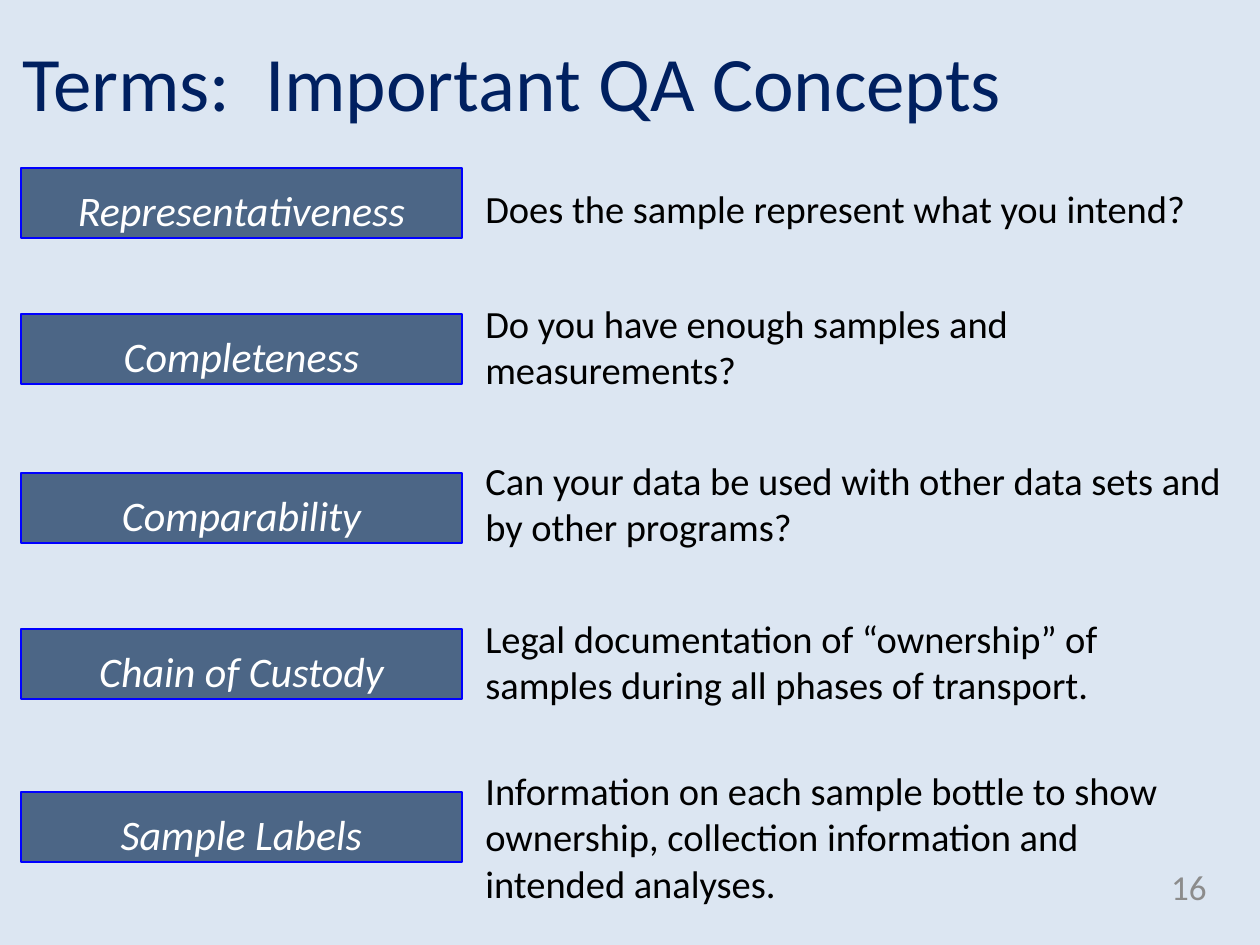
from lxml.etree import SubElement
from pptx import Presentation
from pptx.dml.color import RGBColor
from pptx.enum.shapes import MSO_SHAPE
from pptx.enum.text import MSO_ANCHOR as Anchor, PP_ALIGN as Align
from pptx.oxml.ns import qn
from pptx.util import Emu, Pt

PX_PER_INCH = 126
COLORS = {
    "background": "DCE6F2",
    "title": "002060",
    "term_fill": "17375E",
    "term_line": "0000FF",
    "term_text": "FFFFFF",
    "meaning": "000000",
    "number": "8C8C8C",
}
TERM_LEFT, TERM_WIDTH, TERM_HEIGHT = 21, 441, 70
MEANING_LEFT = 473

# term, term top, meaning, meaning top, meaning width, meaning height
CONCEPTS = [
    ("Representativeness", 168,
     "Does the sample represent what you intend?", 179, 766, 59),
    ("Completeness", 314,
     "Do you have enough samples and measurements?", 294, 766, 106),
    ("Comparability", 473,
     "Can your data be used with other data sets and by other programs?",
     451, 766, 106),
    ("Chain of Custody", 629,
     "Legal documentation of “ownership” of samples during all phases of transport.",
     609, 766, 106),
    ("Sample Labels", 792,
     "Information on each sample bottle to show ownership, "
     "collection information and intended analyses.", 761, 735, 152),
]


def px(*lengths):
    return [Emu(round(length * 914400 / PX_PER_INCH)) for length in lengths]


def rgb(name):
    return RGBColor.from_string(COLORS[name])


def write(shape, text, size, color, align=Align.LEFT, anchor=Anchor.TOP):
    """Put one wrapped paragraph in the shape and return it."""
    frame = shape.text_frame
    frame.word_wrap = True
    frame.vertical_anchor = anchor
    paragraph = frame.paragraphs[0]
    paragraph.text = text
    paragraph.alignment = align
    paragraph.font.name = "Calibri"
    paragraph.font.size = Pt(size)
    paragraph.font.color.rgb = rgb(color)
    return paragraph


def add_text(slide, box, text, size, color, **layout):
    write(slide.shapes.add_textbox(*px(*box)), text, size, color, **layout)


def add_term(slide, term, top):
    bar = slide.shapes.add_shape(
        MSO_SHAPE.RECTANGLE, *px(TERM_LEFT, top, TERM_WIDTH, TERM_HEIGHT))
    bar.shadow.inherit = False
    bar.fill.solid()
    bar.fill.fore_color.rgb = rgb("term_fill")
    fill_color = bar.fill._xPr.find(qn("a:solidFill"))[0]
    SubElement(fill_color, qn("a:alpha"), val="73000")
    bar.line.color.rgb = rgb("term_line")
    bar.line.width = Pt(1)
    label = write(bar, term, 24, "term_text", align=Align.CENTER)
    label.font.italic = True
    label.line_spacing = 1.2


def main():
    deck = Presentation()
    deck.slide_width, deck.slide_height = px(1260, 945)
    slide = deck.slides.add_slide(deck.slide_layouts[6])
    slide.background.fill.solid()
    slide.background.fill.fore_color.rgb = rgb("background")

    add_text(slide, (958, 861, 261, 50), "16", 20, "number",
             align=Align.RIGHT, anchor=Anchor.MIDDLE)
    for term, term_top, meaning, top, width, height in CONCEPTS:
        add_term(slide, term, term_top)
        add_text(slide, (MEANING_LEFT, top, width, height), meaning, 22, "meaning")
    add_text(slide, (10, 28, 1239, 110), "Terms:  Important QA Concepts", 44, "title")
    deck.save("out.pptx")


if __name__ == "__main__":
    main()
